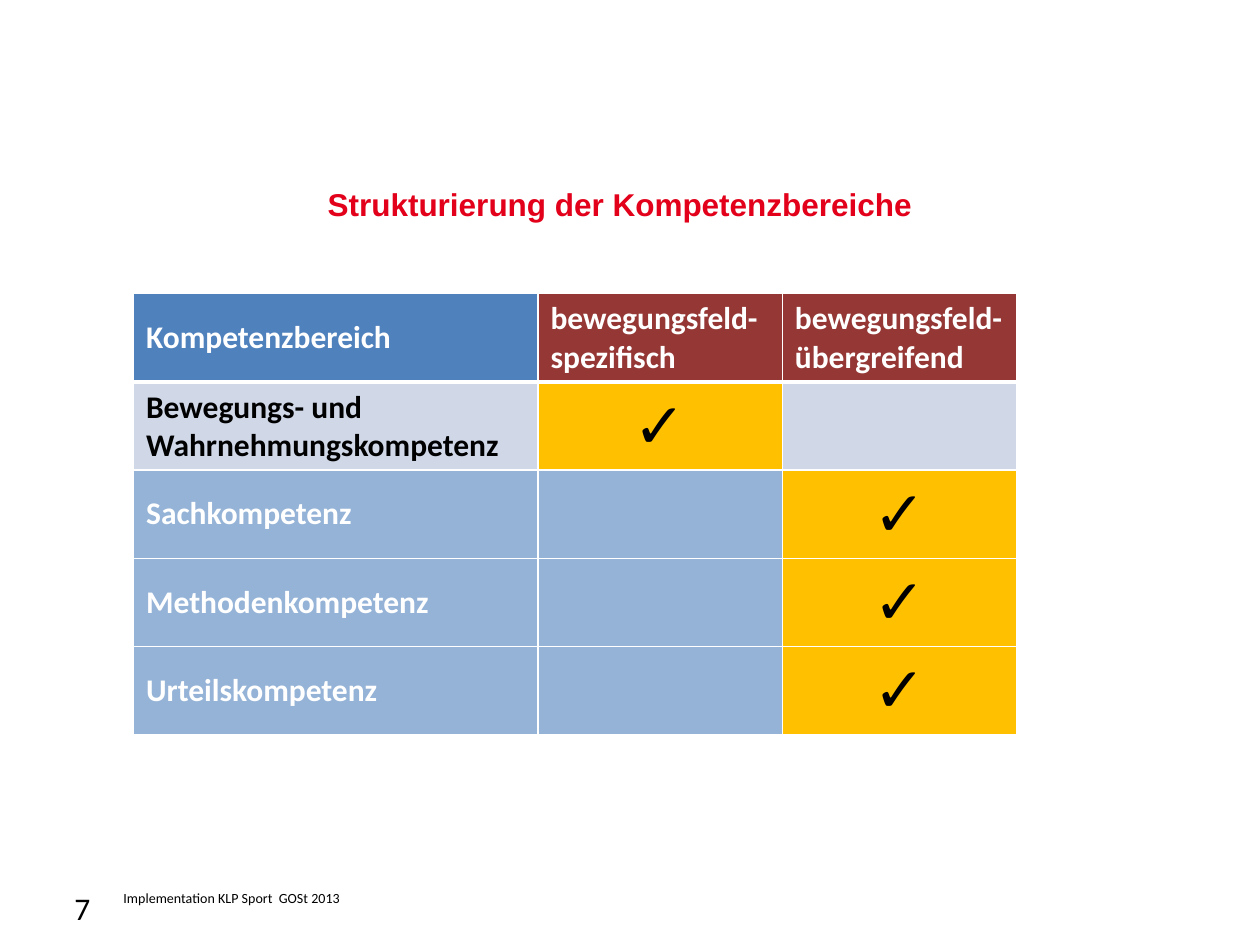
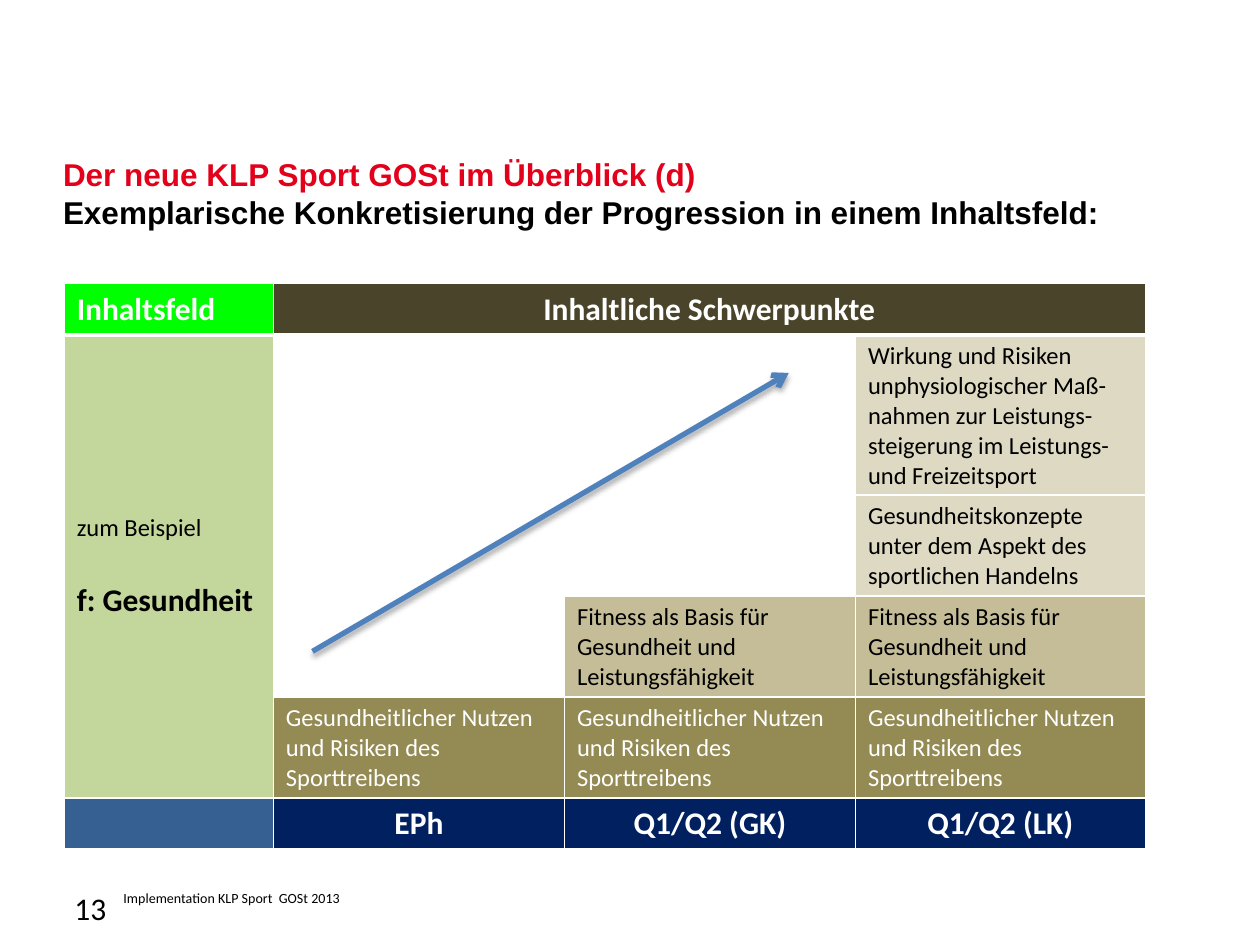
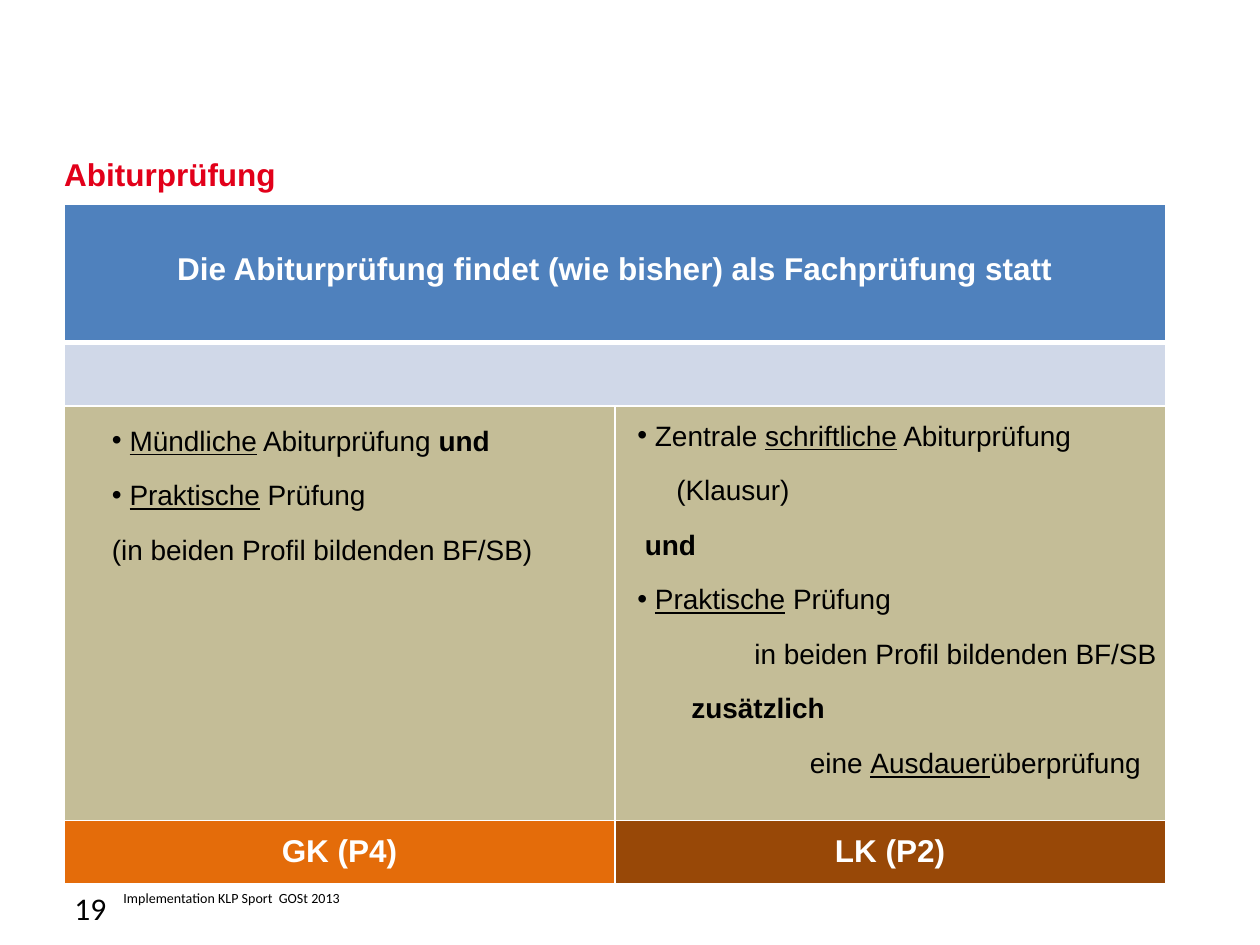
import dataclasses

import lxml.etree
import pptx
import pptx.dml.color
import pptx.enum.shapes
import pptx.enum.text
import pptx.oxml.ns
import pptx.util

Inches = pptx.util.Inches
Pt = pptx.util.Pt
LEFT = pptx.enum.text.PP_ALIGN.LEFT
CENTER = pptx.enum.text.PP_ALIGN.CENTER
TOP = pptx.enum.text.MSO_ANCHOR.TOP
MIDDLE = pptx.enum.text.MSO_ANCHOR.MIDDLE


@dataclasses.dataclass(frozen=True)
class Theme:
    title_font: str = "Arial"
    body_font: str = "Calibri"
    large: int = 18
    medium: int = 16
    small: int = 14
    footer: int = 8
    check: int = 36
    red: str = "E2001A"
    black: str = "000000"
    white: str = "FFFFFF"
    blue: str = "4F81BD"
    pale_blue: str = "D0D8E8"
    light_blue: str = "95B3D7"
    steel: str = "376092"
    navy: str = "002060"
    maroon: str = "953735"
    gold: str = "FFC000"
    lime: str = "00FF00"
    leaf: str = "C3D69B"
    umber: str = "4A452A"
    olive: str = "948A54"
    sand: str = "C4BD97"
    pale_sand: str = "DDD9C3"
    orange: str = "E46C0A"
    brown: str = "984807"


THEME = Theme()


@dataclasses.dataclass(frozen=True)
class Box:
    left: float
    top: float
    width: float
    height: float

    def lengths(self):
        return [Inches(value) for value in dataclasses.astuple(self)]


def text_style(size, color, bold=False, font=THEME.body_font):
    return {"name": font, "size": Pt(size), "bold": bold, "color": color}


TITLE = text_style(THEME.large, THEME.red, True, THEME.title_font)
SUBTITLE = TITLE | {"color": THEME.black}
NUMBER = text_style(THEME.large, THEME.black)
FOOTER = text_style(THEME.footer, THEME.black)
STRONG = text_style(THEME.large, THEME.black, True)
STRONG_WHITE = STRONG | {"color": THEME.white}
SMALL = text_style(THEME.small, THEME.black)
SMALL_WHITE = SMALL | {"color": THEME.white}
CHECK = text_style(THEME.check, THEME.black)
EXAM_HEADER = STRONG_WHITE | {"name": THEME.title_font}
EXAM = text_style(THEME.medium, THEME.black, font=THEME.title_font)
EXAM_BOLD = EXAM | {"bold": True}
EXAM_UNDERLINED = EXAM | {"underline": True}

TITLE_MARGINS = {"margin_left": 0, "margin_top": Inches(0.16), "margin_right": 0, "margin_bottom": 0}
NO_MARGINS = TITLE_MARGINS | {"margin_top": 0}
EXAM_MARGINS = {"margin_left": Inches(0.14), "margin_right": Inches(0.14),
                "margin_top": Inches(0.1), "margin_bottom": Inches(0.1)}


@dataclasses.dataclass(frozen=True)
class Cell:
    fill: str
    text: str = ""
    style: dict = None
    alignment: int = None


def set_attributes(target, values):
    for name, value in values.items():
        setattr(target, name, value)


def add_element(parent, tag, **attributes):
    return lxml.etree.SubElement(parent, pptx.oxml.ns.qn(tag), attributes)


def add_run(paragraph, text, style):
    run = paragraph.add_run()
    run.text = text
    set_attributes(run.font, {name: value for name, value in style.items() if name != "color"})
    run.font.color.rgb = pptx.dml.color.RGBColor.from_string(style["color"])


def write_paragraphs(text_frame, lines):
    """Fill a frame with (runs, paragraph format) pairs, each run being (text, style)."""
    for index, (runs, layout) in enumerate(lines):
        paragraph = text_frame.add_paragraph() if index else text_frame.paragraphs[0]
        set_attributes(paragraph, layout)
        for text, style in runs:
            add_run(paragraph, text, style)


def add_text(slide, box, lines, margins=None):
    shape = slide.shapes.add_textbox(*box.lengths())
    set_attributes(shape.text_frame, {"word_wrap": True} | (margins or {}))
    write_paragraphs(shape.text_frame, lines)
    return shape


def add_title(slide, box, *lines, alignment=None):
    add_text(slide, box, [([line], {"alignment": alignment}) for line in lines], TITLE_MARGINS)


def add_footer_part(slide, box, text, style):
    """Write text in an outline without fill or line."""
    left, top, width, height = box.lengths()
    builder = slide.shapes.build_freeform(left, top)
    builder.add_line_segments([(left + width, top), (left + width, top + height), (left, top + height)])
    shape = builder.convert_to_shape()
    shape.shadow.inherit = False
    shape.fill.background()
    shape.line.fill.background()
    set_attributes(shape.text_frame, NO_MARGINS | {"word_wrap": True, "vertical_anchor": TOP})
    write_paragraphs(shape.text_frame, [([(text, style)], {"alignment": LEFT})])


def add_footer(slide, box, number):
    number_box = dataclasses.replace(box, width=0.32)
    label_box = dataclasses.replace(box, left=box.left + 0.39, width=box.width - 0.39)
    add_footer_part(slide, number_box, str(number), NUMBER)
    add_footer_part(slide, label_box, "Implementation KLP Sport  GOSt 2013", FOOTER)


def set_borders(cell, row):
    """Draw thin white borders, with a thick one under the header row."""
    widths = {"L": 1, "R": 1, "T": 3 if row == 1 else 1, "B": 3 if row == 0 else 1}
    for side, width in widths.items():
        line = add_element(cell._tc.get_or_add_tcPr(), f"a:ln{side}", w=str(Pt(width)))
        add_element(add_element(line, "a:solidFill"), "a:srgbClr", val=THEME.white)


def add_table(slide, box, columns, rows, contents, merges=(), margins=None):
    """Build a table from rows of Cell; None stands for a cell covered by a merge."""
    table = slide.shapes.add_table(len(rows), len(columns), *box.lengths()).table
    set_attributes(table, {"first_row": False, "horz_banding": False})
    for column, width in zip(table.columns, columns):
        column.width = Inches(width)
    for row, height in zip(table.rows, rows):
        row.height = Inches(height)
    for first, last in merges:
        table.cell(*first).merge(table.cell(*last))
    for row_index, row_contents in enumerate(contents):
        for column_index, content in enumerate(row_contents):
            if content is None:
                continue
            cell = table.cell(row_index, column_index)
            set_borders(cell, row_index)
            cell.fill.solid()
            cell.fill.fore_color.rgb = pptx.dml.color.RGBColor.from_string(content.fill)
            set_attributes(cell, {"vertical_anchor": MIDDLE} | (margins or {}))
            if content.text:
                lines = [([(line, content.style)], {"alignment": content.alignment})
                         for line in content.text.split("\n")]
                write_paragraphs(cell.text_frame, lines)
    return table


def add_competence_table(slide, box):
    check = Cell(THEME.gold, "✓", CHECK, CENTER)
    empty = Cell(THEME.light_blue)
    contents = [
        [Cell(THEME.blue, "Kompetenzbereich", STRONG_WHITE),
         Cell(THEME.maroon, "bewegungsfeld-\nspezifisch", STRONG_WHITE),
         Cell(THEME.maroon, "bewegungsfeld-übergreifend", STRONG_WHITE)],
        [Cell(THEME.pale_blue, "Bewegungs- und Wahrnehmungskompetenz", STRONG),
         check, Cell(THEME.pale_blue)],
    ]
    for name in ("Sachkompetenz", "Methodenkompetenz", "Urteilskompetenz"):
        contents.append([Cell(THEME.light_blue, name, STRONG_WHITE), empty, check])
    row_count = len(contents)
    add_table(slide, box, [3.21, 1.94, 1.86], [box.height / row_count] * row_count, contents)


def add_progression_table(slide, box):
    blank = Cell(THEME.white)
    benefit = Cell(THEME.olive, "Gesundheitlicher Nutzen und Risiken des Sporttreibens", SMALL_WHITE)
    fitness = Cell(THEME.sand, "Fitness als Basis für Gesundheit und Leistungsfähigkeit", SMALL)
    concepts = Cell(THEME.pale_sand, "Gesundheitskonzepte unter dem Aspekt des sportlichen Handelns", SMALL)
    doping = Cell(THEME.pale_sand, "Wirkung und Risiken unphysiologischer Maß-nahmen zur Leistungs-steigerung "
                  "im Leistungs- und Freizeitsport", SMALL)
    levels = [Cell(THEME.navy, level, STRONG_WHITE, CENTER) for level in ("EPh", "Q1/Q2 (GK)", "Q1/Q2 (LK)")]
    contents = [
        [Cell(THEME.lime, "Inhaltsfeld", STRONG_WHITE),
         Cell(THEME.umber, "Inhaltliche Schwerpunkte", STRONG_WHITE, CENTER), None, None],
        [Cell(THEME.leaf), blank, blank, doping],
        [None, blank, blank, concepts],
        [None, blank, fitness, fitness],
        [None, benefit, benefit, benefit],
        [Cell(THEME.steel), *levels],
    ]
    table = add_table(slide, box, [1.66, 2.31, 2.31, 2.3], [0.41, 1.27, 0.8, 0.8, 0.79, 0.4], contents,
                      merges=[((0, 1), (0, 3)), ((1, 0), (4, 0))])
    write_paragraphs(table.cell(1, 0).text_frame, [
        ([("zum Beispiel", SMALL)], {}),
        ([("f: Gesundheit", STRONG)], {"space_before": Pt(22)}),
    ])


def add_progression_arrow(slide, box):
    """Draw the arrow that rises from the lower left to the upper right of the box."""
    ends = (box.left, box.top + box.height, box.left + box.width, box.top)
    arrow = slide.shapes.add_connector(pptx.enum.shapes.MSO_CONNECTOR.STRAIGHT, *map(Inches, ends))
    arrow.line.width = Pt(3)
    arrow.line.color.rgb = pptx.dml.color.RGBColor.from_string(THEME.blue)
    properties = arrow._element.spPr
    add_element(arrow.line._get_or_add_ln(), "a:tailEnd", type="arrow")
    shadow = add_element(add_element(properties, "a:effectLst"), "a:outerShdw", blurRad=str(Pt(3.1)),
                         dist=str(Pt(1.8)), dir="5400000", rotWithShape="0")
    add_element(add_element(shadow, "a:srgbClr", val=THEME.black), "a:alpha", val="35000")


def add_exam_table(slide, box):
    contents = [
        [Cell(THEME.blue, "Die Abiturprüfung findet (wie bisher) als Fachprüfung statt", EXAM_HEADER, CENTER), None],
        [Cell(THEME.pale_blue), None],
        [Cell(THEME.sand), Cell(THEME.sand)],
        [Cell(THEME.orange, "GK (P4)", EXAM_HEADER, CENTER), Cell(THEME.brown, "LK (P2)", EXAM_HEADER, CENTER)],
    ]
    table = add_table(slide, box, [box.width / 2] * 2, [1.1, 0.5, 3.29, 0.5], contents,
                      merges=[((0, 0), (0, 1)), ((1, 0), (1, 1))], margins=EXAM_MARGINS)
    table.cell(0, 0).margin_bottom = Inches(0.16)


def add_exam_list(slide, box, items):
    """Write (indent, runs) items; an indent of None makes the item a bullet."""
    layout = {"space_after": Pt(12)}
    shape = add_text(slide, box, [(runs, layout) for indent, runs in items])
    hang = Inches(0.14)
    for paragraph, (indent, runs) in zip(shape.text_frame.paragraphs, items):
        properties = paragraph._p.get_or_add_pPr()
        if indent is None:
            properties.set("marL", str(hang))
            properties.set("indent", str(-hang))
            add_element(properties, "a:buFont", typeface=THEME.title_font)
            add_element(properties, "a:buChar", char="•")
        else:
            properties.set("marL", str(Inches(indent)))
            properties.set("indent", "0")


def add_exam_parts(slide, box):
    practical = (None, [("Praktische", EXAM_UNDERLINED), (" Prüfung", EXAM)])
    basic_course = [
        (None, [("Mündliche", EXAM_UNDERLINED), (" Abiturprüfung ", EXAM), ("und", EXAM_BOLD)]),
        practical,
        (0, [("(in beiden Profil bildenden BF/SB)", EXAM)]),
    ]
    advanced_course = [
        (None, [("Zentrale ", EXAM), ("schriftliche", EXAM_UNDERLINED), (" Abiturprüfung", EXAM)]),
        (0.31, [("(Klausur)", EXAM)]),
        (0.06, [("und", EXAM_BOLD)]),
        practical,
        (0.93, [("in beiden Profil bildenden BF/SB", EXAM)]),
        (0.43, [("zusätzlich", EXAM_BOLD)]),
        (1.37, [("eine ", EXAM), ("Ausdauer", EXAM_UNDERLINED), ("überprüfung", EXAM)]),
    ]
    add_exam_list(slide, Box(box.left + 0.28, box.top + 1.69, 5, 1.25), basic_course)
    add_exam_list(slide, Box(box.left + 4.45, box.top + 1.65, 5, 3), advanced_course)


def build_competence_slide(slide):
    add_title(slide, Box(0.51, 1.31, 8.82, 0.46), ("Strukturierung der Kompetenzbereiche", TITLE), alignment=CENTER)
    add_competence_table(slide, Box(1.06, 2.33, 7.01, 3.5))


def build_progression_slide(slide):
    add_title(slide, Box(0.5, 1.07, 8.82, 0.76), ("Der neue KLP Sport GOSt im Überblick (d)", TITLE),
              ("Exemplarische Konkretisierung der Progression in einem Inhaltsfeld:", SUBTITLE))
    box = Box(0.51, 2.25, 8.58, 4.48)
    add_progression_table(slide, box)
    add_progression_arrow(slide, Box(box.left + 1.97, box.top + 0.71, 3.78, 2.21))


def build_exam_slide(slide):
    add_title(slide, Box(0.51, 1.07, 8.82, 0.46), ("Abiturprüfung", TITLE))
    box = Box(0.51, 1.62, 8.74, 5.39)
    add_exam_table(slide, box)
    add_exam_parts(slide, box)


def main():
    presentation = pptx.Presentation()
    set_attributes(presentation, {"slide_width": Inches(10), "slide_height": Inches(7.5)})
    builders = {7: build_competence_slide, 13: build_progression_slide, 19: build_exam_slide}
    for number, build in builders.items():
        slide = presentation.slides.add_slide(presentation.slide_layouts[6])
        build(slide)
        add_footer(slide, Box(0.59, 7.06, 2.67, 0.37), number)
    presentation.save("out.pptx")


if __name__ == "__main__":
    main()
